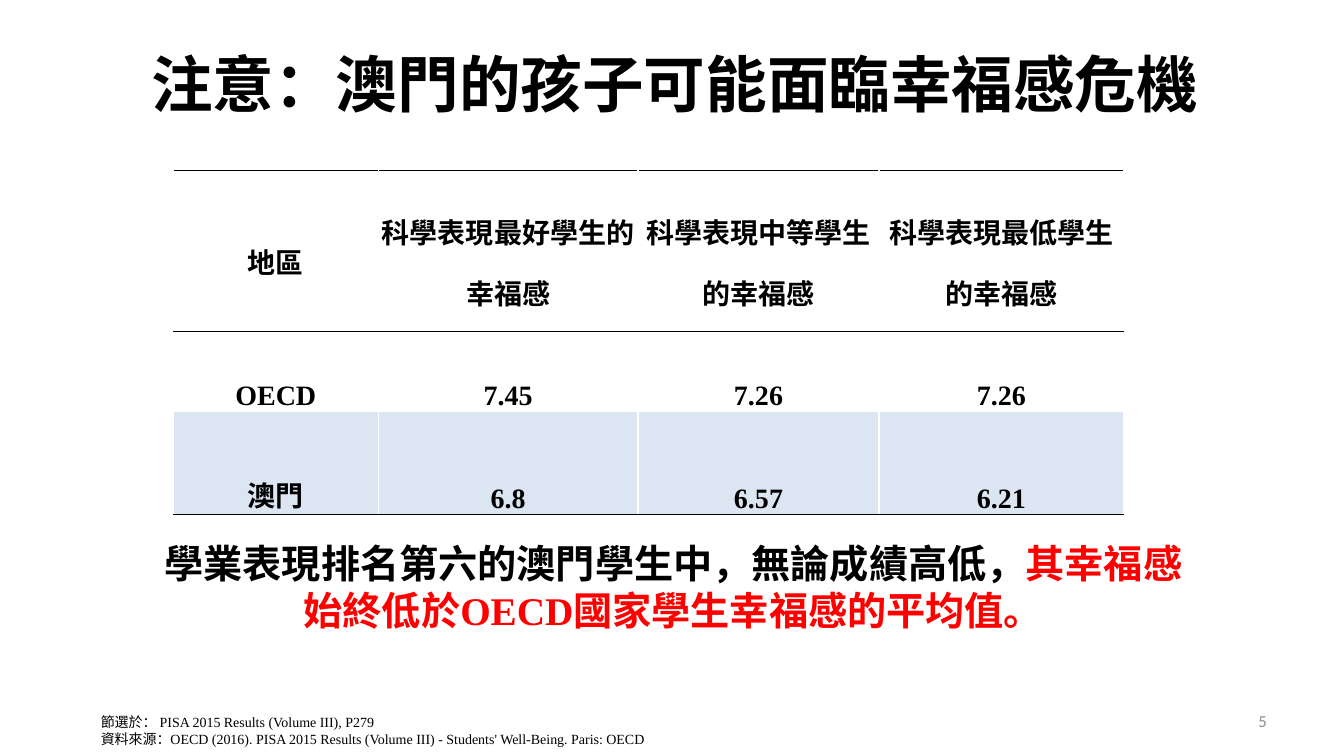
from lxml import etree
from pptx import Presentation
from pptx import util as u
from pptx.dml.color import RGBColor
from pptx.enum import text as t
from pptx.oxml import ns

COLORS = {"ink": "000000", "paper": "FFFFFF", "band": "DCE6F2",
          "alert": "FF0000", "muted": "8C8C8C"}
SERIF, SANS = "Times New Roman", "Calibri"

TABLE_ROWS = [
    ("地區", "科學表現最好學生的幸福感", "科學表現中等學生的幸福感", "科學表現最低學生的幸福感"),
    ("OECD", "7.45", "7.26", "7.26"),
    ("澳門", "6.8", "6.57", "6.21"),
]
COLUMN_WIDTHS = (5.16, 6.55, 6.07, 6.17)
# height, line spacing, anchor, fill, top border, bottom border
ROW_STYLES = [
    (4.06, 1.5, t.MSO_ANCHOR.MIDDLE, "paper", "ink", "ink"),
    (2.03, 2.5, t.MSO_ANCHOR.BOTTOM, "paper", "ink", "paper"),
    (2.03, 2.5, t.MSO_ANCHOR.BOTTOM, "band", "paper", "ink"),
]
TABLE_LEFT, TABLE_TOP = 4.37, 4.29

# Each paragraph is a list of (words, colour) runs.
TITLE = [[("注意：澳門的孩子可能面臨幸福感危機", "ink")]]
FINDING = [[("學業表現排名第六的澳門學生中，無論成績高低，", "ink"),
            ("其幸福感始終低於OECD國家學生幸福感的平均值。", "alert")]]
SOURCES = [
    [("節選於： PISA 2015 Results (Volume III), P279", "ink")],
    [("資料來源：OECD (2016). PISA 2015 Results (Volume III) - "
      "Students' Well-Being. Paris: OECD", "ink")],
]
PAGE_NUMBER = [[("5", "muted")]]


def add_run(para, words, color, size, font=SERIF, bold=False):
    span = para.add_run()
    span.text = words
    span.font.name = font
    span.font.size = u.Pt(size)
    span.font.bold = bold
    span.font.color.rgb = RGBColor.from_string(COLORS[color])


def add_text(page, area, paragraphs, size, font=SERIF, bold=False, wrap=True,
             align=t.PP_ALIGN.LEFT, anchor=t.MSO_ANCHOR.TOP, spacing=1.0):
    box = page.shapes.add_textbox(*(u.Cm(length) for length in area))
    frame = box.text_frame
    frame.word_wrap = wrap
    frame.vertical_anchor = anchor
    for index, runs in enumerate(paragraphs):
        para = frame.add_paragraph() if index else frame.paragraphs[0]
        para.alignment = align
        para.line_spacing = spacing
        for words, color in runs:
            add_run(para, words, color, size, font, bold)


def set_borders(cell, top, bottom):
    """Give a cell 1 pt borders, white at both sides."""
    properties = cell._tc.get_or_add_tcPr()
    sides = {"lnL": "paper", "lnR": "paper", "lnT": top, "lnB": bottom}
    for index, (side, color) in enumerate(sides.items()):
        line = etree.Element(ns.qn(f"a:{side}"), w=str(u.Pt(1)))
        fill = etree.SubElement(line, ns.qn("a:solidFill"))
        etree.SubElement(fill, ns.qn("a:srgbClr"), val=COLORS[color])
        properties.insert(index, line)


def add_wellbeing_table(page):
    width = sum(COLUMN_WIDTHS)
    height = sum(style[0] for style in ROW_STYLES)
    table = page.shapes.add_table(
        len(TABLE_ROWS), len(COLUMN_WIDTHS), u.Cm(TABLE_LEFT), u.Cm(TABLE_TOP),
        u.Cm(width), u.Cm(height)).table
    table.first_row = table.horz_banding = False
    for column, column_width in zip(table.columns, COLUMN_WIDTHS):
        column.width = u.Cm(column_width)
    for row, values, style in zip(table.rows, TABLE_ROWS, ROW_STYLES):
        row_height, spacing, anchor, fill, top, bottom = style
        row.height = u.Cm(row_height)
        for cell, value in zip(row.cells, values):
            cell.margin_left = cell.margin_right = cell.margin_top = u.Cm(0.03)
            cell.margin_bottom = 0
            cell.vertical_anchor = anchor
            cell.fill.solid()
            cell.fill.fore_color.rgb = RGBColor.from_string(COLORS[fill])
            set_borders(cell, top, bottom)
            para = cell.text_frame.paragraphs[0]
            para.alignment = t.PP_ALIGN.CENTER
            para.line_spacing = spacing
            add_run(para, value, "ink", 20, bold=True)


def main():
    deck = Presentation()
    deck.slide_width, deck.slide_height = u.Cm(33.87), u.Cm(19.05)
    page = deck.slides.add_slide(deck.slide_layouts[6])
    add_wellbeing_table(page)
    add_text(page, (24.28, 17.65, 7.9, 1.02), PAGE_NUMBER, 12, font=SANS,
             align=t.PP_ALIGN.RIGHT, anchor=t.MSO_ANCHOR.MIDDLE)
    add_text(page, (2.29, 17.86, 29.95, 1.12), SOURCES, 10)
    add_text(page, (3.56, 1.24, 27.15, 1.96), TITLE, 44, bold=True,
             wrap=False, spacing=0.9)
    add_text(page, (3.56, 13.46, 26.82, 2.64), FINDING, 28, bold=True,
             align=t.PP_ALIGN.CENTER)
    deck.save("out.pptx")


if __name__ == "__main__":
    main()
